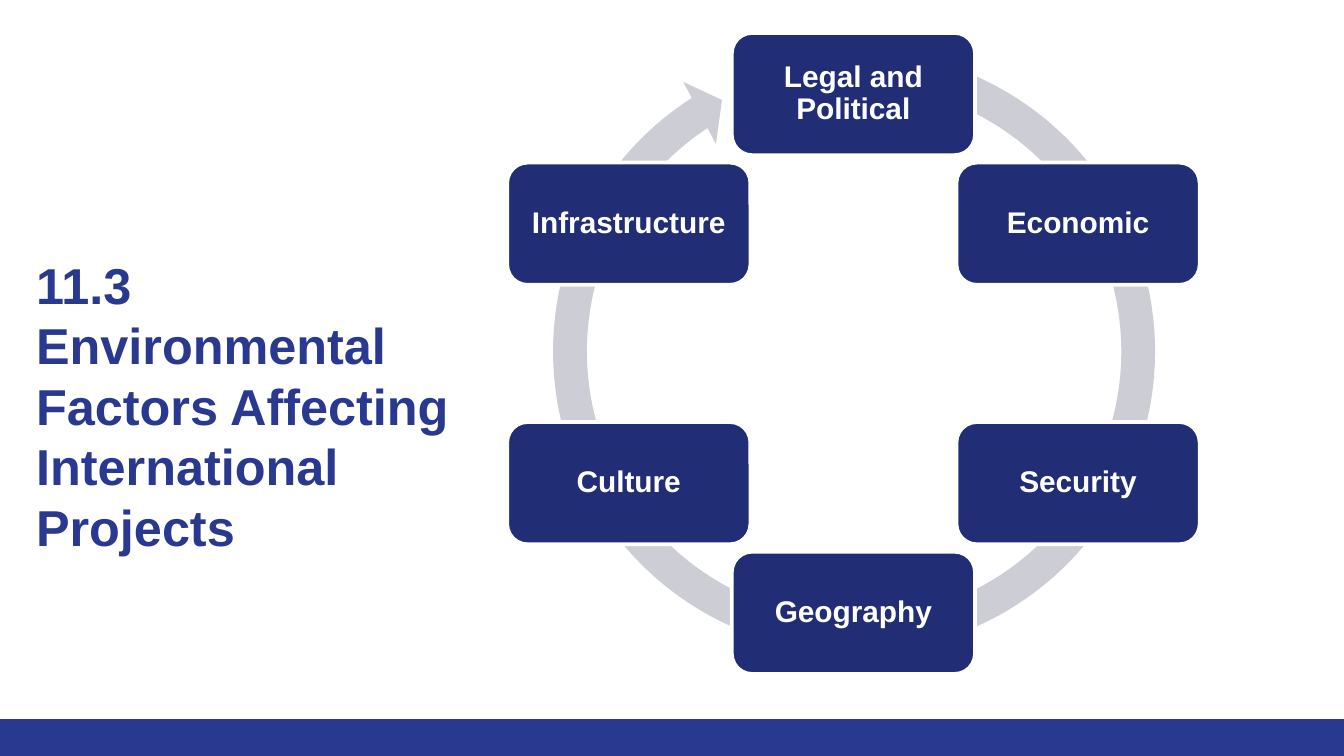
from dataclasses import dataclass
from math import cos, radians, sin

from pptx import Presentation
from pptx.dml.color import RGBColor
from pptx.enum.shapes import MSO_SHAPE as Shape
from pptx.enum.text import MSO_ANCHOR as Anchor, PP_ALIGN as Align
from pptx.shapes.autoshape import Shape as AutoShape
from pptx.slide import Slide
from pptx.util import Inches, Pt

COLORS = {
    "title": "2A3990",
    "factor": "212D74",
    "ring": "CDCDD6",
    "white": "FFFFFF",
}
SIDES = ("margin_left", "margin_top", "margin_right", "margin_bottom")
FACTORS = ("Legal and Political", "Economic", "Security",
           "Geography", "Culture", "Infrastructure")
CENTER_X, CENTER_Y, RADIUS = 6.35, 2.63, 1.93
FACTOR_WIDTH, FACTOR_HEIGHT = 1.81, 0.91
RING_ADJUSTMENTS = (0.053, 3.126, 142.241, 171.294, 0.055)


@dataclass(frozen=True)
class Frame:
    left: float
    top: float
    width: float
    height: float

    def lengths(self) -> tuple[int, ...]:
        return tuple(map(Inches, (self.left, self.top, self.width, self.height)))


@dataclass(frozen=True)
class TextStyle:
    size: float
    color: str
    align: Align
    anchor: Anchor
    spacing: float
    inset: float


TITLE_STYLE = TextStyle(27, "title", Align.LEFT, Anchor.TOP, 1.0, 0.1)
FACTOR_STYLE = TextStyle(16, "white", Align.CENTER, Anchor.MIDDLE, 0.9, 0.11)


def color(name: str) -> RGBColor:
    return RGBColor.from_string(COLORS[name])


def set_format(target: object, values: dict) -> None:
    for name, value in values.items():
        setattr(target, name, value)


def write_text(box: AutoShape, text: str, style: TextStyle) -> None:
    frame = box.text_frame
    set_format(frame, {"word_wrap": True, "vertical_anchor": style.anchor}
               | dict.fromkeys(SIDES, Inches(style.inset)))
    para = frame.paragraphs[0]
    set_format(para, {"alignment": style.align, "line_spacing": style.spacing})
    span = para.add_run()
    span.text = text
    set_format(span.font, {"name": "Arial", "size": Pt(style.size), "bold": True})
    span.font.color.rgb = color(style.color)


def add_filled(page: Slide, kind: Shape, frame: Frame, fill: str) -> AutoShape:
    shape = page.shapes.add_shape(kind, *frame.lengths())
    shape.shadow.inherit = False
    shape.fill.solid()
    shape.fill.fore_color.rgb = color(fill)
    shape.line.fill.background()
    return shape


def add_ring(page: Slide) -> None:
    ring = add_filled(page, Shape.CIRCULAR_ARROW, Frame(3.98, 0.24, 4.75, 4.75), "ring")
    for index, value in enumerate(RING_ADJUSTMENTS):
        ring.adjustments[index] = value


def add_factor(page: Slide, index: int, label: str) -> None:
    angle = radians(360 / len(FACTORS) * index)
    frame = Frame(CENTER_X + RADIUS * sin(angle) - FACTOR_WIDTH / 2,
                  CENTER_Y - RADIUS * cos(angle) - FACTOR_HEIGHT / 2,
                  FACTOR_WIDTH, FACTOR_HEIGHT)
    box = add_filled(page, Shape.ROUNDED_RECTANGLE, frame, "factor")
    box.line.color.rgb = color("white")
    box.line.width = Pt(2)
    write_text(box, label, FACTOR_STYLE)


def main() -> None:
    """Build the slide on environmental factors around a circular arrow."""
    deck = Presentation()
    width = Inches(10)
    set_format(deck, {"slide_width": width, "slide_height": width * 9 // 16})
    page = deck.slides.add_slide(deck.slide_layouts[6])
    add_filled(page, Shape.RECTANGLE, Frame(0, 5.35, 10, 0.28), "title")
    title = page.shapes.add_textbox(*Frame(0.17, 1.79, 3.48, 2.6).lengths())
    write_text(title, "11.3 Environmental Factors Affecting International Projects",
               TITLE_STYLE)
    add_ring(page)
    for index, label in enumerate(FACTORS):
        add_factor(page, index, label)
    deck.save("out.pptx")


if __name__ == "__main__":
    main()
